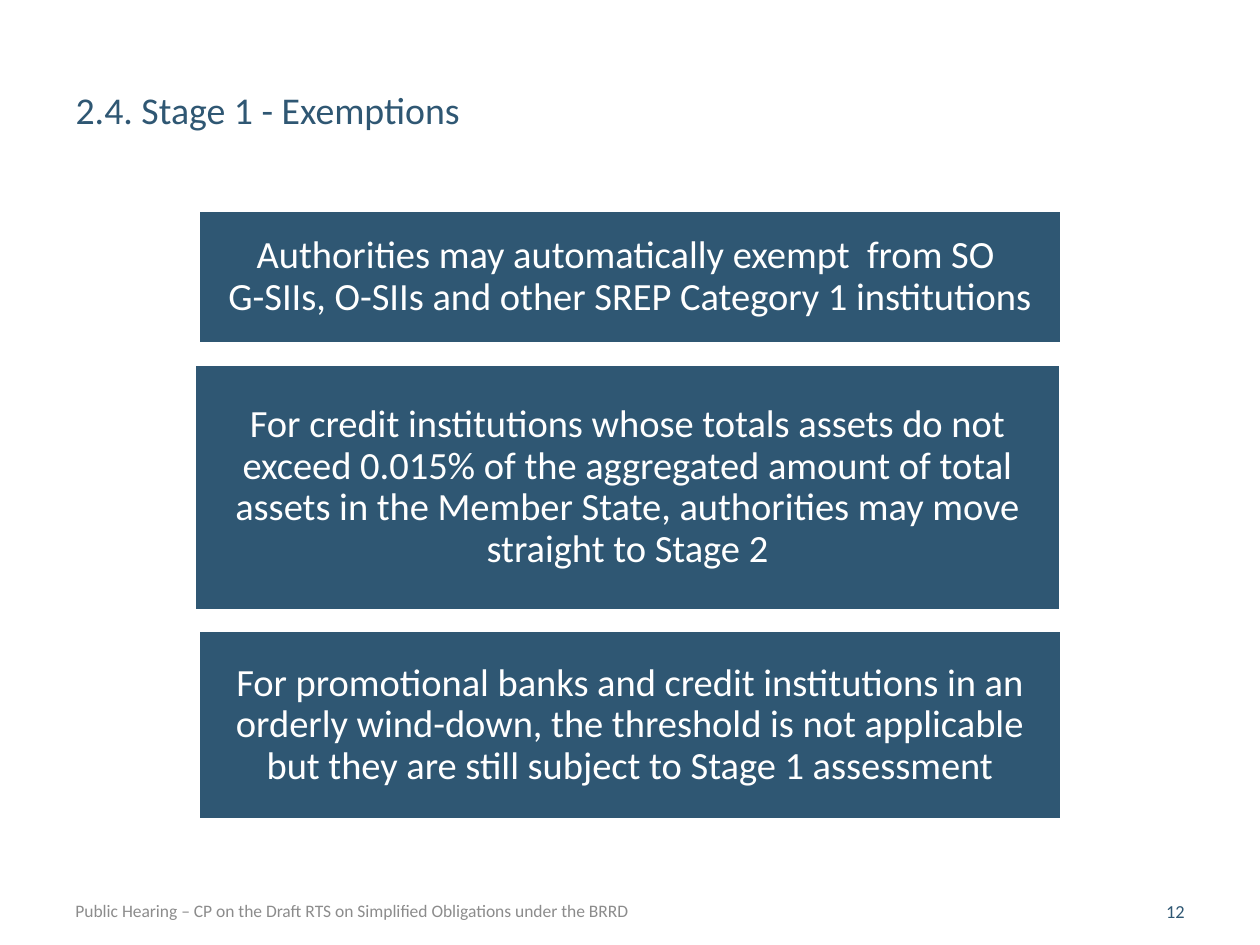
from dataclasses import dataclass

from pptx import Presentation
from pptx import util as u
from pptx.dml.color import RGBColor
from pptx.enum import shapes, text
from pptx.shapes.autoshape import Shape
from pptx.slide import Slide

COLOURS = {"navy": "2F5773", "grey": "8C8C8C", "white": "FFFFFF"}
MIDDLE = text.MSO_ANCHOR.MIDDLE
ALIGN = text.PP_ALIGN


@dataclass
class Area:
    left: float
    top: float
    width: float
    height: float

    def lengths(self) -> list[int]:
        return [u.Inches(n) for n in (self.left, self.top, self.width, self.height)]


@dataclass
class Label:
    area: Area
    words: str
    size: float
    colour: str
    align: ALIGN = ALIGN.LEFT
    anchor: text.MSO_ANCHOR = MIDDLE
    inset: float = 0.1
    spacing: float = 1.0


def rgb(name: str) -> RGBColor:
    return RGBColor.from_string(COLOURS[name])


def apply(target: object, values: dict) -> None:
    for key, value in values.items():
        setattr(target, key, value)


def write(box: Shape, label: Label) -> None:
    frame = box.text_frame
    frame.text = label.words
    inset = u.Inches(label.inset)
    apply(frame, {
        "word_wrap": True, "auto_size": text.MSO_AUTO_SIZE.NONE,
        "vertical_anchor": label.anchor,
        "margin_left": inset, "margin_right": inset,
        "margin_top": u.Inches(0.05), "margin_bottom": u.Inches(0.05),
    })
    para = frame.paragraphs[0]
    apply(para, {"alignment": label.align, "line_spacing": label.spacing})
    for span in para.runs:
        apply(span.font, {"name": "Calibri", "size": u.Pt(label.size)})
        span.font.color.rgb = rgb(label.colour)


def add_title(page: Slide, label: Label) -> None:
    box = page.shapes.title
    apply(box, dict(zip(("left", "top", "width", "height"), label.area.lengths())))
    write(box, label)


def add_label(page: Slide, label: Label) -> None:
    write(page.shapes.add_textbox(*label.area.lengths()), label)


def add_panel(page: Slide, area: Area, words: str) -> None:
    box = page.shapes.add_shape(shapes.MSO_SHAPE.RECTANGLE, *area.lengths())
    box.shadow.inherit = False
    box.fill.solid()
    box.fill.fore_color.rgb = rgb("navy")
    box.line.color.rgb = rgb("white")
    box.line.width = u.Pt(2)
    write(box, Label(area, words, 22, "white", ALIGN.CENTER, inset=0.09, spacing=0.9))


TITLE = Label(Area(0.5, 0.64, 7.29, 0.61), "2.4. Stage 1 - Exemptions", 21.6, "navy",
              anchor=text.MSO_ANCHOR.TOP)
PANELS = [
    (Area(1.57, 1.67, 6.86, 1.06),
     "Authorities may automatically exempt  from SO \v"
     "G-SIIs, O-SIIs and other SREP Category 1 institutions"),
    (Area(1.54, 2.89, 6.88, 1.96),
     "For credit institutions whose totals assets do not exceed 0.015% of the "
     "aggregated amount of total assets in the Member State, authorities may "
     "move straight to Stage 2"),
    (Area(1.57, 5, 6.86, 1.51),
     "For promotional banks and credit institutions in an orderly wind-down, the "
     "threshold is not applicable but they are still subject to Stage 1 assessment"),
]
FOOTERS = [
    Label(Area(0.5, 7.11, 5.38, 0.24),
          "Public Hearing – CP on the Draft RTS on Simplified Obligations under the BRRD",
          10, "grey"),
    Label(Area(8.65, 7.11, 0.85, 0.24), "12", 10.5, "navy", ALIGN.RIGHT),
]


def main() -> None:
    deck = Presentation()
    apply(deck, {"slide_width": u.Inches(10), "slide_height": u.Inches(7.5)})
    page = deck.slides.add_slide(deck.slide_layouts[5])
    add_title(page, TITLE)
    for area, words in PANELS:
        add_panel(page, area, words)
    for label in FOOTERS:
        add_label(page, label)
    deck.save("out.pptx")


if __name__ == "__main__":
    main()
